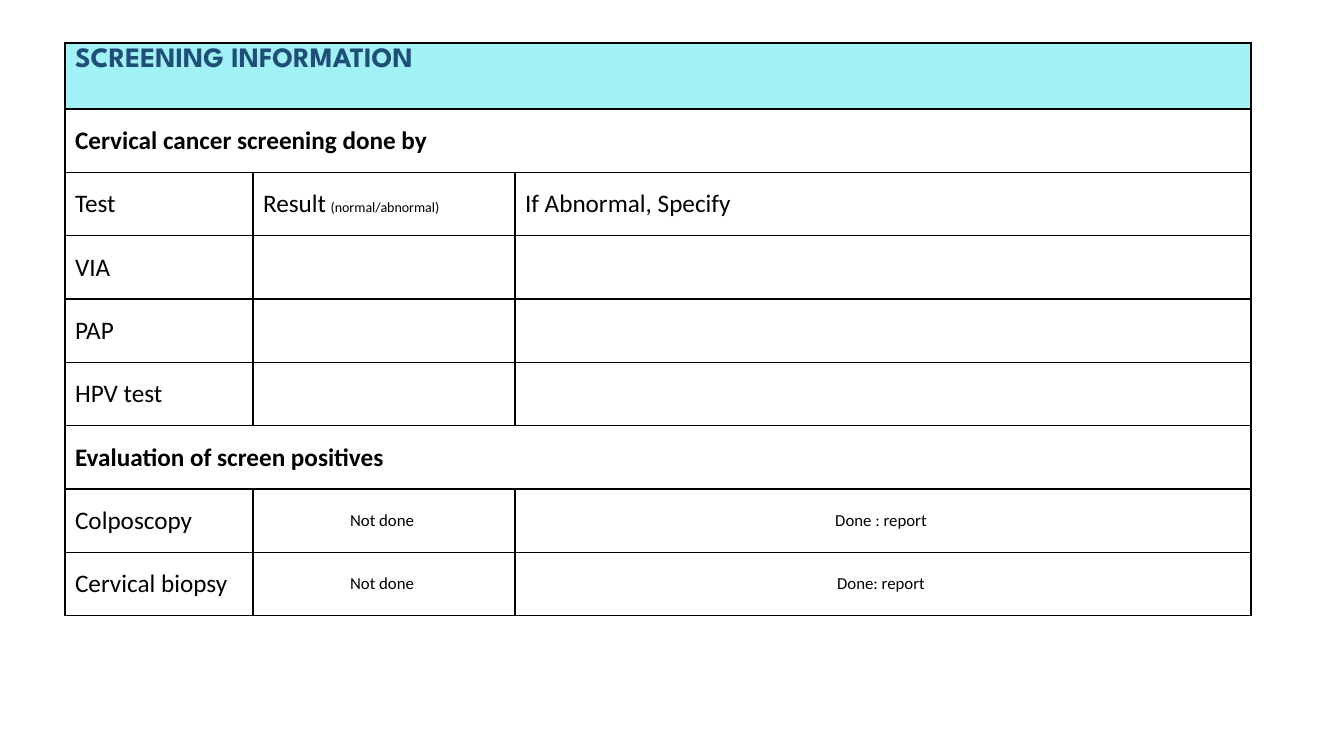
from lxml.etree import SubElement
from pptx import Presentation
from pptx.dml.color import RGBColor
from pptx.enum.text import MSO_ANCHOR, PP_ALIGN
from pptx.oxml.ns import qn
from pptx.util import Emu, Pt

COLORS = {"title": "1F4E79", "band": "A0F2F6", "text": "000000", "border": "000000"}


class SlideBuilder:
    scale = 914400 / 100.8
    font = "Calibri"

    def __init__(self, prs):
        self.slide = prs.slides.add_slide(prs.slide_layouts[6])

    def px(self, value):
        return Emu(round(value * self.scale))

    def table(self, left, top, widths, heights):
        box = (left, top, sum(widths), sum(heights))
        frame = self.slide.shapes.add_table(
            len(heights), len(widths), *map(self.px, box))
        table = frame.table
        table.first_row = table.horz_banding = False
        for column, width in zip(table.columns, widths):
            column.width = self.px(width)
        for row, height in zip(table.rows, heights):
            row.height = self.px(height)
        for cell in table.iter_cells():
            self.border(cell)
            cell.fill.background()
            cell.vertical_anchor = MSO_ANCHOR.MIDDLE
        return table

    def border(self, cell):
        tc_pr = cell._tc.get_or_add_tcPr()
        for side in ("lnL", "lnR", "lnT", "lnB"):
            ln = SubElement(tc_pr, qn(f"a:{side}"), w=str(Pt(1)))
            fill = SubElement(ln, qn("a:solidFill"))
            SubElement(fill, qn("a:srgbClr"), val=COLORS["border"])

    def label(self, cell, *parts, bold=False, font=font, color="text",
              align=PP_ALIGN.LEFT):
        p = cell.text_frame.paragraphs[0]
        p.alignment = align
        for text, size in parts:
            r = p.add_run()
            r.text = text
            r.font.size = Pt(size)
            r.font.name = font
            r.font.bold = bold
            r.font.color.rgb = RGBColor.from_string(COLORS[color])

    def heading(self, table, row, text, size=18, **style):
        cell = table.cell(row, 0)
        cell.merge(table.cell(row, len(table.columns) - 1))
        self.label(cell, (text, size), bold=True, **style)
        return cell


def main():
    prs = Presentation()
    prs.slide_width, prs.slide_height = Emu(12192000), Emu(6858000)
    s = SlideBuilder(prs)

    body_rows = 8
    table = s.table(65, 43, [188, 262, 736], [66] + [507 / body_rows] * body_rows)

    title = s.heading(table, 0, "SCREENING INFORMATION", size=20,
                      font="League Spartan", color="title")
    title.vertical_anchor = MSO_ANCHOR.TOP
    title.fill.solid()
    title.fill.fore_color.rgb = RGBColor.from_string(COLORS["band"])
    s.heading(table, 1, "Cervical cancer screening done by")
    s.heading(table, 6, "Evaluation of screen positives")

    tests = {2: "Test", 3: "VIA", 4: "PAP", 5: "HPV test",
             7: "Colposcopy", 8: "Cervical biopsy"}
    for row, test in tests.items():
        s.label(table.cell(row, 0), (test, 18))

    s.label(table.cell(2, 1), ("Result", 18), (" ", 14), ("(normal/abnormal)", 10))
    s.label(table.cell(2, 2), ("If Abnormal, Specify", 18))
    for row, report in ((7, "Done : report "), (8, "Done: report ")):
        for col, text in ((1, "Not done "), (2, report)):
            s.label(table.cell(row, col), (text, 12), align=PP_ALIGN.CENTER)

    prs.save("out.pptx")


if __name__ == "__main__":
    main()
